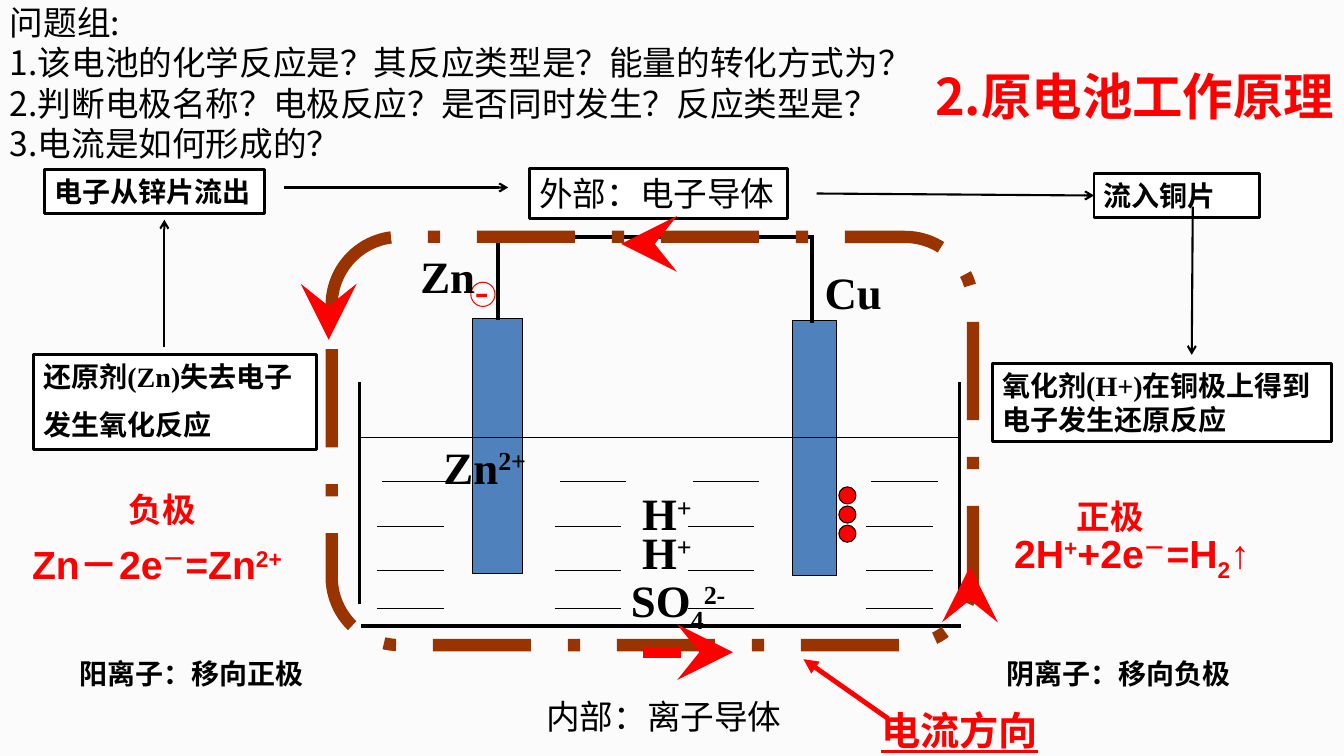
import dataclasses

import pptx
import pptx.dml.color
import pptx.enum.dml
import pptx.enum.shapes
import pptx.enum.text
import pptx.oxml
import pptx.oxml.ns
import pptx.util

RGBColor = pptx.dml.color.RGBColor
SHAPES = pptx.enum.shapes.MSO_SHAPE
ALIGN = pptx.enum.text.PP_ALIGN
BLACK = RGBColor(0x00, 0x00, 0x00)
WHITE = RGBColor(0xFF, 0xFF, 0xFF)
RED = RGBColor(0xFF, 0x00, 0x00)
BLUE = RGBColor(0x4F, 0x81, 0xBD)
BROWN = RGBColor(0x99, 0x33, 0x00)
PAPER = RGBColor(0xFB, 0xFB, 0xFB)
SERIF, SANS, HAN = "Times New Roman", "Arial", "Noto Sans CJK SC"
UP, DOWN = 0.3, -0.25
COLUMNS, ROWS = 133.3, 75
CELL = pptx.util.Inches(0.1)


@dataclasses.dataclass
class Box:
    """A rectangle measured in columns and rows of the slide grid."""
    left: float
    top: float
    width: float
    height: float

    def inner(self, left, top, width, height):
        """Return a box placed relative to this one."""
        return Box(self.left + left, self.top + top, width, height)

    def lengths(self):
        """Return left, top, width and height as slide lengths."""
        return [round(cells * CELL) for cells in dataclasses.astuple(self)]


def add_text(target, paragraphs, size, font=SERIF, color=BLACK, bold=True, wrap=True,
             align=ALIGN.LEFT, leading=1.2, gap=0, indent=None, underline=None):
    """Fill a shape with paragraphs made of strings or (text, baseline) spans."""
    frame = target.text_frame
    frame.word_wrap = wrap
    frame.auto_size = pptx.enum.text.MSO_AUTO_SIZE.SHAPE_TO_FIT_TEXT
    frame.vertical_anchor = pptx.enum.text.MSO_ANCHOR.TOP
    for index, content in enumerate(paragraphs):
        para = frame.add_paragraph() if index else frame.paragraphs[0]
        para.alignment = align
        para.line_spacing = pptx.util.Pt(round(size * leading, 1))
        if index:
            para.space_before = pptx.util.Pt(gap)
        if indent:
            properties = para._p.get_or_add_pPr()
            properties.set("marL", str(round(indent[0] * CELL)))
            properties.set("indent", str(round(indent[1] * CELL)))
        spans = [(content, 0)] if isinstance(content, str) else content
        for text, baseline in spans:
            span = para.add_run()
            span.text = text
            span.font.size = pptx.util.Pt(size)
            span.font.name = font
            span.font.bold = bold
            span.font.underline = underline
            span.font.color.rgb = color
            if baseline:
                span.font._element.set("baseline", str(round(baseline * 100000)))


def add_label(page, box, *paragraphs, **style):
    """Add a plain text box."""
    add_text(page.shapes.add_textbox(*box.lengths()), paragraphs, **style)


def add_figure(page, kind, box, fill, line, weight):
    """Add a preset shape with the given fill and outline."""
    figure = page.shapes.add_shape(kind, *box.lengths())
    figure.shadow.inherit = False
    if fill is None:
        figure.fill.background()
    else:
        figure.fill.solid()
        figure.fill.fore_color.rgb = fill
    figure.line.color.rgb = line
    figure.line.width = pptx.util.Pt(weight)
    return figure


def add_frame(page, box, *paragraphs, **style):
    """Add a white box with a black outline and text."""
    frame = add_figure(page, SHAPES.RECTANGLE, box, WHITE, BLACK, 2)
    add_text(frame, paragraphs, **style)


def add_line(page, box, start, end, weight, color=BLACK, head=None, head_size="med"):
    """Add a straight line between two points of a box."""
    points = [round(cells * CELL) for x, y in (start, end) for cells in (box.left + x, box.top + y)]
    line = page.shapes.add_connector(pptx.enum.shapes.MSO_CONNECTOR.STRAIGHT, *points)
    line.line.color.rgb = color
    line.line.width = pptx.util.Pt(weight)
    properties = line._element.spPr
    if head:
        tip = pptx.oxml.parse_xml(f'<a:tailEnd {pptx.oxml.ns.nsdecls("a")} type="{head}" '
                                  f'w="{head_size}" len="{head_size}"/>')
        properties.find(pptx.oxml.ns.qn("a:ln")).append(tip)
    properties.append(pptx.oxml.parse_xml(f'<a:effectLst {pptx.oxml.ns.nsdecls("a")}/>'))


def draw_cell(page, box):
    """Draw the beaker, electrodes, wires, solution and ion labels."""
    for left, top, width in ((42.9, 8.4, 4.4), (11.2, 8.2, 4.9)):
        add_figure(page, SHAPES.RECTANGLE, box.inner(left, top, width, 25.3), BLUE, BLACK, 0.75)
    for x in (0, box.width):
        add_line(page, box, (x, 14.5), (x, 36.5), 2.25)
    add_line(page, box, (0.1, box.height), (box.width + 0.1, box.height), 2.25)
    add_line(page, box, (0, 20), (box.width, 20), 0.75)
    for y, shift in ((24.4, 0.5), (28.8, 0), (33.2, 0), (37, 0)):
        for x in (1.7, 19.3, 32.5, 50.2):
            add_line(page, box, (x + shift, y), (x + shift + 6.6, y), 0.75)
    for start, end in (((13.7, 8.3), (13.7, 0)), ((13.5, 0.1), (45, 0.1)), ((44.8, 0.3), (44.8, 8.6))):
        add_line(page, box, start, end, 3)
    add_figure(page, SHAPES.OVAL, box.inner(11, 4.6, 2.4, 2.4), None, RED, 0.75)
    add_label(page, box.inner(10.5, 2.4, 3.9, 6.4), "-", size=32, font="Roboto", color=RED, bold=False)
    hydrogen = [("H", 0), ("+", UP)]
    for left, top, width, ion in (
            (45.1, 2.4, 11.8, "Cu"), (5, 0.8, 8.7, "Zn"),
            (7.3, 19.7, 11, [("Zn", 0), ("2+", UP)]),
            (27, 24.3, 15, hydrogen), (27, 28.2, 15, hydrogen),
            (25.9, 33.7, 14.2, [("SO", 0), ("4", DOWN), ("2-", UP)])):
        add_label(page, box.inner(left, top, width, 6.4), ion, size=32)
    for bubble in range(3):
        add_figure(page, SHAPES.OVAL, box.inner(47.5, 24.9 + 1.9 * bubble, 1.7, 1.7), RED, BLACK, 0.75)


def draw_electron_flow(page, box):
    """Draw the framed steps of the outer circuit and their arrows."""
    add_frame(page, box.inner(0.1, 18.5, 28.1, 9.4), "还原剂(Zn)失去电子", "发生氧化反应", size=20, gap=10)
    add_frame(page, box.inner(1.2, 0.1, 21.8, 4.4), "电子从锌片流出", size=20, wrap=False)
    add_frame(page, box.inner(49.3, 0, 25.6, 5), "外部：电子导体", size=24, font=SANS, bold=False, wrap=False)
    add_frame(page, box.inner(105.3, 0.5, 16.4, 4.4), "流入铜片", size=20)
    add_frame(page, box.inner(95.2, 19.4, 33.7, 7.7), "氧化剂(H+)在铜极上得到电子发生还原反应", size=20)
    for start, end in (((13.1, 17.7), (13.1, 5.1)), ((25, 1.9), (47.2, 1.9)),
                       ((77.8, 2.5), (105.3, 2.7)), ((115.1, 3.8), (115, 18.5))):
        add_line(page, box, start, end, 1.5, head="arrow")


def draw_pole(page, box, name, equation, indent, equation_place, name_place, ion, ion_place):
    """Place a pole's name, its electrode equation and its ion movement."""
    add_label(page, box.inner(*name_place), name, size=24, color=RED)
    add_label(page, box.inner(*equation_place), equation, size=28, font=SANS, color=RED,
              leading=0.96, indent=indent)
    add_label(page, box.inner(*ion_place), ion, size=20, font=SANS)


def draw_current(page, box):
    """Draw the dashed current loop, its arrowheads and its caption."""
    loop = add_figure(page, SHAPES.ROUNDED_RECTANGLE, box, None, BROWN, 8.75)
    loop.line.dash_style = pptx.enum.dml.MSO_LINE.LONG_DASH_DOT
    for start, end in (((-0.3, 7.6), (-0.3, 10.2)), ((63.3, 34.7), (63.3, 32.7)),
                       ((30.9, 41.2), (39.8, 41.2)), ((33.1, 0.7), (28.7, 0.7))):
        add_line(page, box, start, end, 8, RED, "stealth", "lg")
    add_label(page, box.inner(53.5, 46.1, 18.3, 5.7), "电流方向", size=28, color=RED, underline=True)
    add_line(page, box, (55.2, 47.8), (46.8, 41.9), 3.5, RED, "triangle")
    add_label(page, box.inner(20.3, 45, 25.6, 5), "内部：离子导体", size=24, font=SANS,
              bold=False, wrap=False)


def draw_heading(page, box):
    """Place the question list and the red title."""
    add_label(page, box.inner(90.3, 6.3, 43, 7.1), "2.原电池工作原理", size=36, font=HAN,
              color=RED, align=ALIGN.RIGHT)
    add_label(page, box.inner(0, 0, 126.6, 17.2), "问题组:",
              "1.该电池的化学反应是？其反应类型是？能量的转化方式为？",
              "2.判断电极名称？电极反应？是否同时发生？反应类型是？",
              "3.电流是如何形成的？", size=24, font=HAN, bold=False)


def main():
    """Build and save the slide."""
    deck = pptx.Presentation()
    deck.slide_width, deck.slide_height = round(COLUMNS * CELL), round(ROWS * CELL)
    page = deck.slides.add_slide(deck.slide_layouts[6])
    page.background.fill.solid()
    page.background.fill.fore_color.rgb = PAPER
    draw_cell(page, Box(35.7, 23.4, 59.5, 38.7))
    draw_electron_flow(page, Box(3.2, 16.7, 129, 28))
    draw_pole(page, Box(1, 48, 31, 21), "负极",
              [("Zn－2e", 0), ("－", UP), ("=Zn", 0), ("2+", UP)], (4, -2.8),
              (0, 6, 28, 5.8), (10.8, 0, 8.8, 5), "阳离子：移向正极", (5.9, 16.6, 26, 4.4))
    draw_pole(page, Box(98.8, 48.8, 34.5, 20.2), "正极",
              [("2H", 0), ("+", UP), ("+2e", 0), ("－", UP), ("=H", 0), ("2", DOWN), ("↑", 0)], None,
              (0.8, 4.8, 33.7, 6.3), (7, -0.1, 10.5, 5), "阴离子：移向负极", (0, 15.8, 26, 4.4))
    draw_current(page, Box(32.9, 23.5, 63.6, 40.5))
    draw_heading(page, Box(0, -0.3, COLUMNS, 17.2))
    deck.save("out.pptx")


if __name__ == "__main__":
    main()
